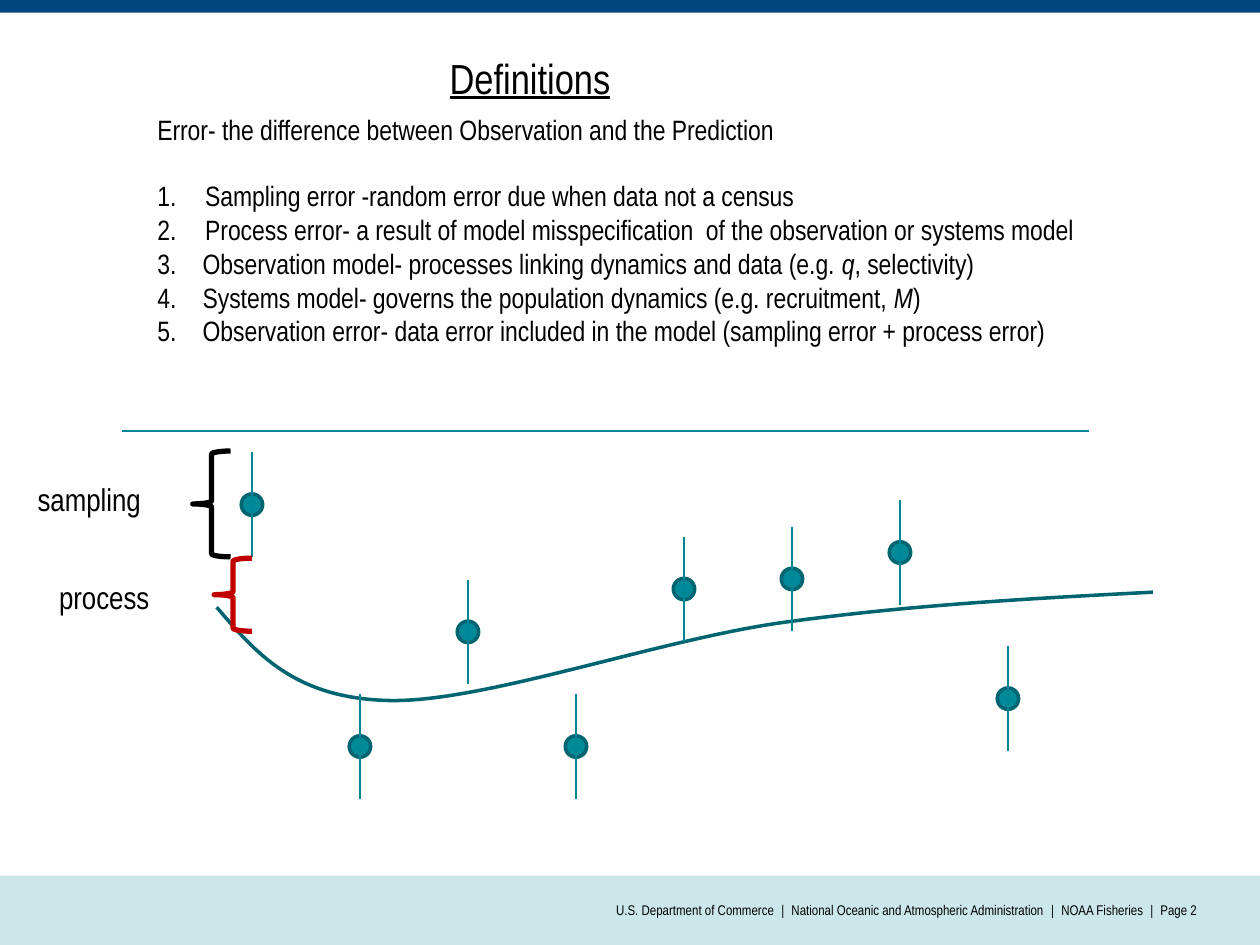
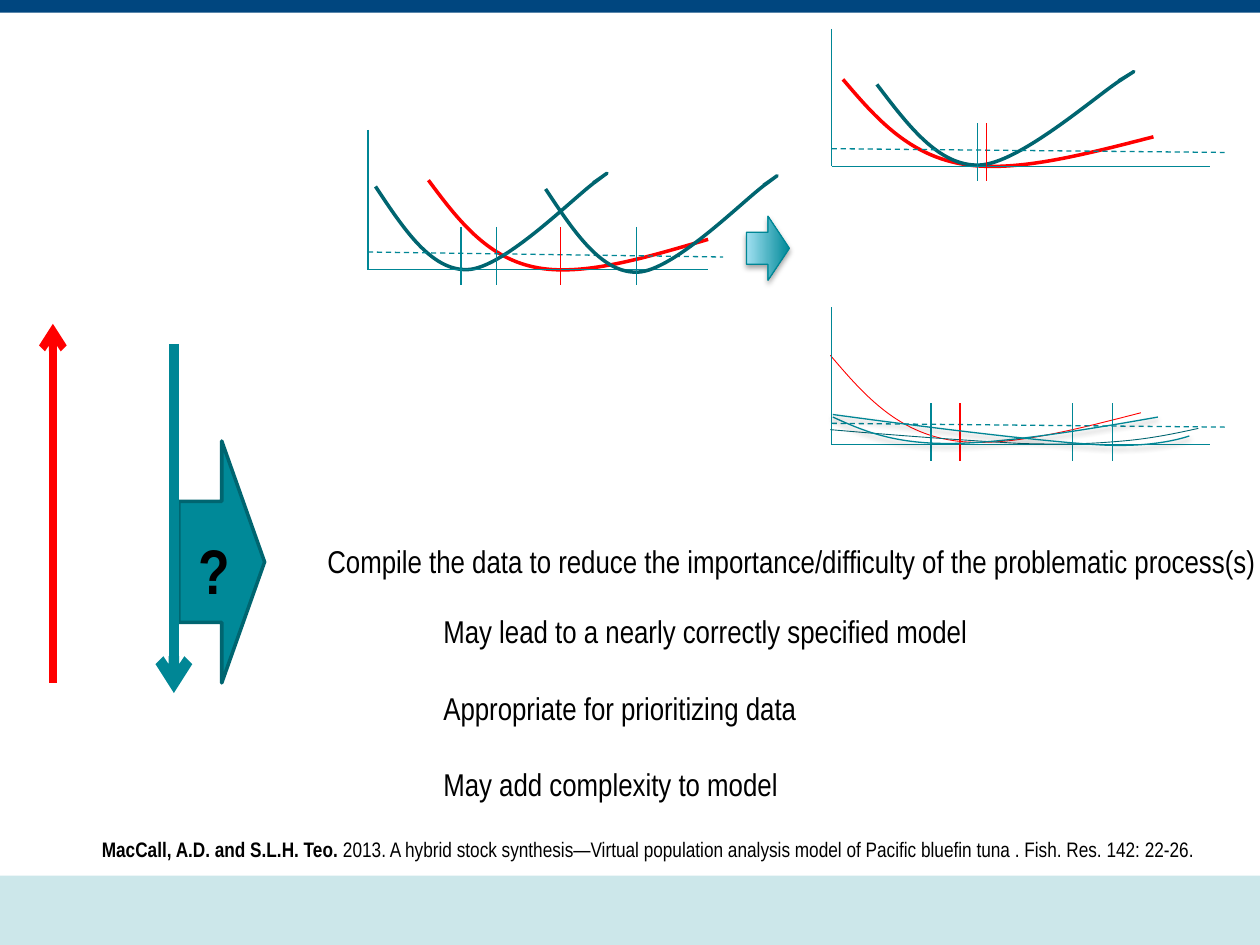
from lxml import etree
from pptx import Presentation
from pptx.dml.color import RGBColor
from pptx.enum.dml import MSO_LINE
from pptx.enum.shapes import MSO_CONNECTOR, MSO_SHAPE
from pptx.enum.text import MSO_ANCHOR, PP_ALIGN
from pptx.oxml.ns import qn
from pptx.util import Inches, Pt

RECT, ELLIPSE, BRACE = MSO_SHAPE.RECTANGLE, MSO_SHAPE.OVAL, MSO_SHAPE.LEFT_BRACE
RIGHT_ARROW, DOWN_ARROW = MSO_SHAPE.RIGHT_ARROW, MSO_SHAPE.DOWN_ARROW
STRAIGHT = MSO_CONNECTOR.STRAIGHT
DASH = MSO_LINE.DASH
RIGHT, MIDDLE = PP_ALIGN.RIGHT, MSO_ANCHOR.MIDDLE

FONT = "Arial Narrow"
EN_SPACE, HARD_SPACE = chr(0x2002), chr(0xA0)
COLORS = {
    "navy": "00467F", "pale": "CCE7EA", "teal": "008998", "dark": "006570",
    "line": "008695", "sky": "A0E0F1", "red": "FF0000", "crimson": "C00000",
    "black": "000000",
}

# Likelihood profiles as Bezier points relative to their start
RED_PROFILE = [(0, 0), (.23, .31), (.46, .61), (.84, .69),
               (1.21, .77), (1.71, .62), (2.22, .47)]
TEAL_PROFILE = [(0, 0), (.22, .33), (.44, .67), (.73, .66), (1.02, .65),
                (1.58, .08), (1.75, -.04), (1.91, -.16), (1.82, -.09), (1.73, -.03)]
WIDE = (1.11, 0.97)


def color(name):
    return RGBColor.from_string(COLORS[name])


def curve_range(values, steps=50):
    """Lowest and highest value that a chain of cubic segments reaches."""
    reached = []
    for i in range(0, len(values) - 1, 3):
        a, b, c, d = values[i:i + 4]
        for n in range(steps + 1):
            t = n / steps
            u = 1 - t
            reached.append(u**3 * a + 3 * u * u * t * b + 3 * u * t * t * c + t**3 * d)
    return int(min(reached)), int(max(reached))


def add_shadow(sp):
    effects = sp.element.spPr.find(qn("a:effectLst"))
    shadow = etree.SubElement(effects, qn("a:outerShdw"), blurRad=str(Pt(3.1)),
                              dist=str(Pt(1.8)), dir="5400000", rotWithShape="0")
    black = etree.SubElement(shadow, qn("a:srgbClr"), val=COLORS["black"])
    etree.SubElement(black, qn("a:alpha"), val="35000")


class Deck:
    def __init__(self):
        self.prs = Presentation()
        self.prs.slide_width, self.prs.slide_height = Inches(10), Inches(7.5)
        self.s = None

    def slide(self):
        self.s = self.prs.slides.add_slide(self.prs.slide_layouts[6])
        self.shape(RECT, (0, 6.95, 10, 0.55), "pale")
        self.shape(RECT, (0, 0, 10, 0.1), "navy")

    def style(self, sp, fill, line, width):
        sp.shadow.inherit = False
        if fill:
            sp.fill.solid()
            sp.fill.fore_color.rgb = color(fill)
        else:
            sp.fill.background()
        if line:
            sp.line.color.rgb = color(line)
            sp.line.width = Pt(width)
        else:
            sp.line.fill.background()

    def shape(self, kind, box, fill=None, line=None, width=2):
        sp = self.s.shapes.add_shape(kind, *map(Inches, box))
        self.style(sp, fill, line, width)
        return sp

    def line(self, start, end, ink="line", width=0.75, dash=False, arrow=False):
        c = self.s.shapes.add_connector(STRAIGHT, *map(Inches, (*start, *end)))
        c.line.color.rgb = color(ink)
        c.line.width = Pt(width)
        if dash:
            c.line.dash_style = DASH
        spPr = c.element.spPr
        if arrow:
            etree.SubElement(spPr.find(qn("a:ln")), qn("a:tailEnd"), type="arrow")
        etree.SubElement(spPr, qn("a:effectLst"))

    def curve(self, points, ink, width=2, shadow=False):
        """Draw a chain of cubic segments, framed by the curve itself."""
        pts = [(Inches(x), Inches(y)) for x, y in points]
        fb = self.s.shapes.build_freeform(*pts[0], scale=1.0)
        fb.add_line_segments(pts[3::3], close=False)
        sp = fb.convert_to_shape()
        (left, right), (top, bottom) = (curve_range(axis) for axis in zip(*pts))
        sp.left, sp.top, sp.width, sp.height = left, top, right - left, bottom - top
        outline = next(sp.element.iter(qn("a:path")))
        outline.set("w", str(right - left))
        outline.set("h", str(bottom - top))
        for old in list(outline):
            outline.remove(old)
        for i in range(0, len(pts), 3):
            segment = etree.SubElement(outline, qn("a:cubicBezTo" if i else "a:moveTo"))
            for x, y in pts[max(i - 2, 0):i + 1]:
                etree.SubElement(segment, qn("a:pt"), x=str(x - left), y=str(y - top))
        self.style(sp, None, ink, width)
        if shadow:
            add_shadow(sp)

    def profile(self, shape, at, ink, scale=(1, 1), width=2):
        self.curve([(at[0] + x * scale[0], at[1] + y * scale[1]) for x, y in shape],
                   ink, width)

    def axes(self, left, top, bottom, right):
        self.line((left, top), (left, bottom))
        self.line((left, bottom), (right, bottom))

    def ticks(self, top, marks):
        for x, ink in marks:
            self.line((x, top), (x, top + 0.46), ink)

    def text(self, box, paras, size, gaps=None, hang=0, auto_from=None, align=None,
             wrap=True):
        """Each paragraph is a list of (text, flags), flags from b, i, u.

        gaps maps a paragraph's index to the space before it; paragraphs from
        auto_from on are numbered.
        """
        tf = self.s.shapes.add_textbox(*map(Inches, box)).text_frame
        tf.word_wrap = wrap
        for i, runs in enumerate(paras):
            p = tf.paragraphs[0] if i == 0 else tf.add_paragraph()
            if hang and i >= (auto_from or 0):
                pPr = p._p.get_or_add_pPr()
                pPr.set("marL", str(Inches(hang)))
                pPr.set("indent", str(-Inches(hang)))
                if auto_from is not None:
                    etree.SubElement(pPr, qn("a:buAutoNum"), type="arabicPeriod")
            if align is not None:
                p.alignment = align
            if gaps and i in gaps:
                p.space_before = Pt(gaps[i])
            for words, flags in runs:
                r = p.add_run()
                r.text = words
                r.font.name, r.font.size = FONT, Pt(size)
                r.font.color.rgb = color("black")
                if "b" in flags:
                    r.font.bold = True
                if "i" in flags:
                    r.font.italic = True
                if "u" in flags:
                    r.font.underline = True
        return tf

    def footer(self, *parts):
        words = f"{EN_SPACE}|{EN_SPACE}".join(parts)
        tf = self.text((2.5, 6.95, 7, 0.55), [[(words, "")]], 8, align=RIGHT)
        tf.margin_left = tf.margin_right = 0
        tf.vertical_anchor = MIDDLE


def definitions(d):
    d.slide()
    d.footer("U.S. Department of Commerce",
             "National Oceanic and Atmospheric Administration",
             "NOAA Fisheries", "Page 2")
    d.text((1.15, 0.84, 7.55, 1.18), [
        [("Error- the difference between Observation and the Prediction", "")],
        [("Sampling error -random error due when data not a census", "")],
        [("Process error- a result of model misspecification  of the observation "
          "or systems model", "")],
    ], 16, gaps={1: 19}, hang=0.38, auto_from=1)
    d.text((3.47, 0.37, 2.33, 0.91), [[("Definitions", "u")]], 24)

    d.curve([(1.72, 4.82), (2.03, 5.18), (2.33, 5.54), (3.08, 5.56), (3.83, 5.58),
             (5.21, 5.08), (6.22, 4.94), (7.24, 4.8), (8.19, 4.75), (9.15, 4.7)], "dark")
    first, step, size = 2, 6 / 7, 0.17
    for i, top in enumerate((3.92, 5.84, 4.93, 5.84, 4.59, 4.51, 4.3, 5.46)):
        x = first + i * step
        d.shape(ELLIPSE, (x - size / 2, top, size, size), "teal", "dark")
        d.line((x, top - 0.33), (x, top + 0.5))

    d.shape(BRACE, (1.53, 3.58, 0.3, 0.84), line="black", width=3)
    d.text((0.2, 3.76, 1.12, 0.4), [[("sampling", "")]], 18)
    d.shape(BRACE, (1.7, 4.43, 0.3, 0.58), line="crimson", width=3)
    d.text((0.37, 4.54, 0.98, 0.4), [[("process", "")]], 18)

    d.text((1.15, 1.91, 7.25, 1.18), [
        [("3.\tObservation model- processes linking dynamics and data (e.g. ", ""),
         ("q", "i"), (", selectivity)", "")],
        [("4.\tSystems model- governs the population dynamics (e.g. recruitment, ", ""),
         ("M", "i"), (")", "")],
        [("5.\tObservation error- data error included in the model "
          "(sampling error + process error)", "")],
    ], 16, hang=0.36)
    d.line((8.64, 3.42), (0.97, 3.42))


def data_weighting(d):
    d.slide()
    d.text((2.5, 4.25, 7.66, 0.71), [[(
        "Compile the data to reduce the importance/difficulty of the problematic "
        "process(s)", "")]], 18)
    d.shape(RIGHT_ARROW, (1.42, 3.5, 0.68, 1.92), "teal", "dark")
    d.text((1.48, 4.17, 0.44, 0.71), [[("?", "b")]], 36, wrap=False)
    d.text((3.42, 4.81, 4.41, 1.92), [
        [("May lead to a nearly correctly specified model", "")],
        [("Appropriate for prioritizing data", "")],
        [("May add complexity to model", "")],
    ], 18, gaps={1: 22, 2: 22})
    d.line((1.38, 2.73), (1.38, 5.5), width=6, arrow=True)
    d.line((0.42, 5.42), (0.42, 2.57), "red", 4.5, arrow=True)

    # Profiles that disagree
    d.profile(RED_PROFILE, (3.4, 1.43), "red")
    d.profile(TEAL_PROFILE, (2.98, 1.48), "dark")
    d.axes(2.92, 1.03, 2.14, 5.62)
    d.line((2.92, 2), (5.74, 2.04), dash=True)
    d.ticks(1.8, [(3.66, "line"), (4.45, "red")])

    # Profiles that agree
    d.profile(RED_PROFILE, (6.69, 0.63), "red", WIDE)
    d.profile(TEAL_PROFILE, (6.96, 0.67), "dark", WIDE)
    d.axes(6.6, 0.23, 1.32, 9.6)
    d.line((6.6, 1.18), (9.72, 1.21), dash=True)
    d.ticks(0.98, [(7.76, "line"), (7.83, "red")])

    # Profiles with little information
    d.profile(RED_PROFILE, (6.59, 2.82), "red", WIDE, 0.5)
    d.axes(6.6, 2.44, 3.53, 9.6)
    d.curve([(9.51, 3.4), (9.33, 3.44), (9.14, 3.48), (8.91, 3.5), (8.68, 3.52),
             (8.5, 3.53), (8.11, 3.52), (7.73, 3.5), (7.16, 3.46), (6.59, 3.41)],
            "dark", 0.5)
    d.line((6.6, 3.36), (9.72, 3.39), dash=True)
    d.ticks(3.2, [(8.51, "line"), (7.62, "red")])

    arrow = d.shape(DOWN_ARROW, (5.84, 1.8, 0.51, 0.34), "teal", "line", 0.75)
    arrow.rotation = 270
    arrow.fill.gradient()
    arrow.fill.gradient_angle = 90
    for stop, name in zip(arrow.fill.gradient_stops, ("teal", "sky")):
        stop.color.rgb = color(name)
    add_shadow(arrow)

    # Further profiles and their minima
    d.profile(TEAL_PROFILE, (4.33, 1.5), "dark")
    d.ticks(1.8, [(3.94, "line"), (5.05, "line")])
    d.ticks(3.2, [(7.39, "line")])
    d.curve([(6.61, 3.31), (6.85, 3.42), (7.09, 3.52), (7.52, 3.52), (7.95, 3.52),
             (8.57, 3.42), (9.19, 3.31)], "line", 0.75, shadow=True)
    d.curve([(6.61, 3.29), (7.42, 3.4), (8.24, 3.5), (8.71, 3.53), (9.18, 3.56),
             (9.44, 3.46), (9.44, 3.46)], "line", 0.75, shadow=True)
    d.ticks(3.2, [(8.83, "line")])

    d.text((0.71, 6.59, 9.11, 0.3), [[
        ("MacCall, A.D. and S.L.H. Teo.", "b"),
        (HARD_SPACE + "2013. A hybrid stock synthesis—Virtual population analysis "
         "model of Pacific bluefin tuna . Fish. Res. 142: 22-26.", "")]], 12)


def main():
    d = Deck()
    definitions(d)
    data_weighting(d)
    d.prs.save("out.pptx")


if __name__ == "__main__":
    main()
